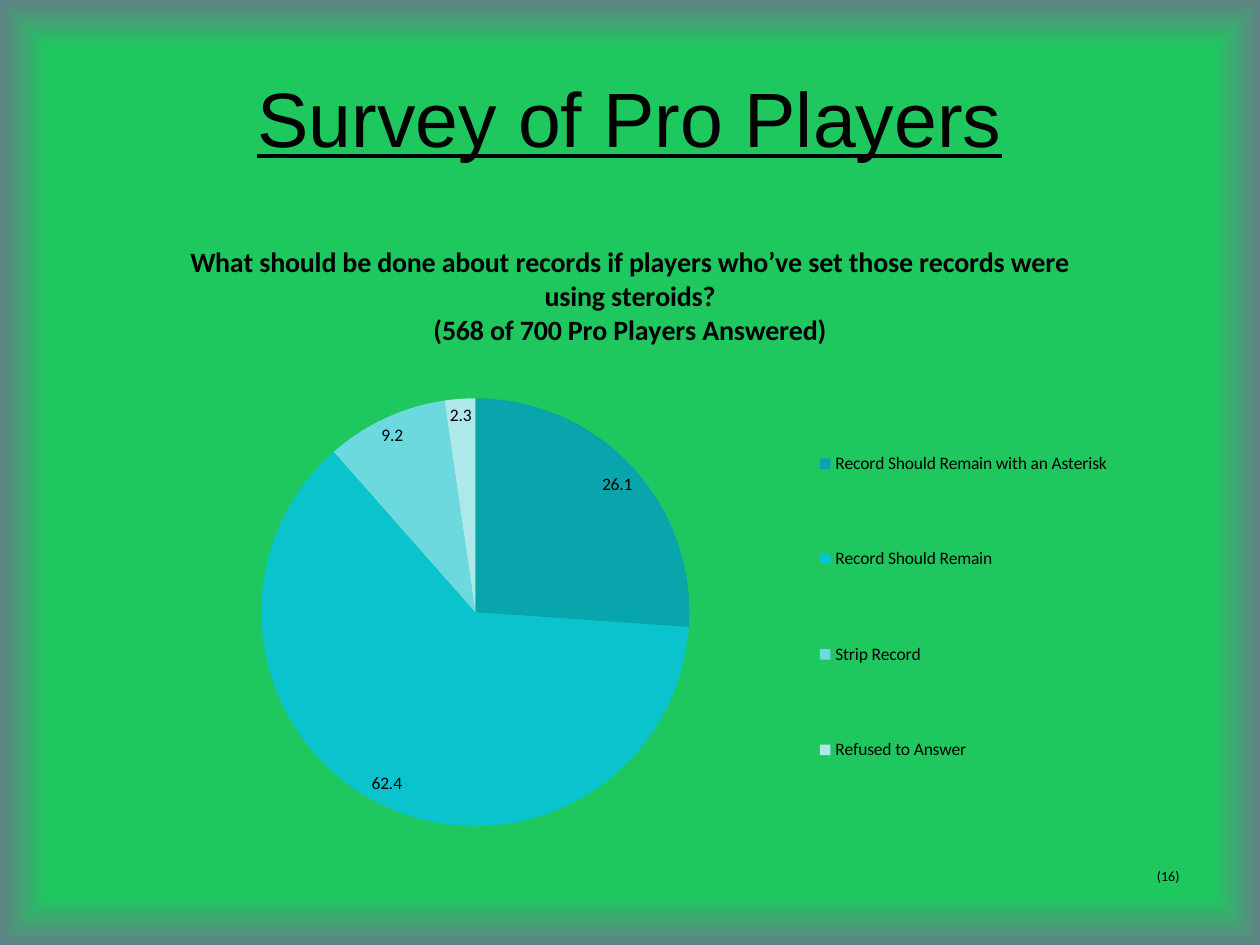
from dataclasses import dataclass

from lxml import etree
from pptx import Presentation
from pptx import util as u
from pptx.chart import data as chart_data
from pptx.dml import color
from pptx.enum import chart as chart_enum
from pptx.enum import text
from pptx.oxml import ns


@dataclass(frozen=True)
class Theme:
    """Colours, fonts and type sizes of the slide."""
    ink: str = "000000"
    field: str = "1FC75F"
    edge: str = "618287"
    slices: tuple = ("08A5AD", "0AC3CD", "6CD9DF", "AEE8EB")
    heading_font: str = "Arial"
    body_font: str = "Calibri"
    heading_size: int = 44
    question_size: int = 16
    chart_size: int = 10
    note_size: int = 8


THEME = Theme()
QUESTION = (
    "What should be done about records if players who’ve set those records were using steroids?",
    "(568 of 700 Pro Players Answered)",
)
ANSWERS = {
    "Record Should Remain with an Asterisk": 26.1,
    "Record Should Remain": 62.4,
    "Strip Record": 9.2,
    "Refused to Answer": 2.3,
}


def style_font(font, name, size):
    """Give a font its face, size and the ink colour."""
    font.name = name
    font.size = u.Pt(size)
    font.color.rgb = color.RGBColor.from_string(THEME.ink)


def paint_background(slide):
    """Fill the slide with a flat field that fades to the edge colour."""
    slide.background.fill.gradient()
    gradient = slide.element.xpath(".//p:bg//a:gradFill")[0]
    for child in list(gradient):
        gradient.remove(child)
    stops = etree.SubElement(gradient, ns.qn("a:gsLst"))
    for position, value in ((90, THEME.field), (100, THEME.edge), (100, THEME.edge)):
        stop = etree.SubElement(stops, ns.qn("a:gs"), pos=str(position * 1000))
        etree.SubElement(stop, ns.qn("a:srgbClr"), val=value)
    shade = etree.SubElement(gradient, ns.qn("a:path"), attrib={"path": "shape"})
    sides = {side: "50000" for side in "ltrb"}
    etree.SubElement(shade, ns.qn("a:fillToRect"), attrib=sides)


def add_text(slide, box, wording, font_name, size, centred=False):
    """Place one line of text in the box and return its font."""
    shape = slide.shapes.add_textbox(*map(u.Pt, box))
    frame = shape.text_frame
    frame.word_wrap = True
    frame.text = wording
    paragraph = frame.paragraphs[0]
    if centred:
        frame.vertical_anchor = text.MSO_ANCHOR.MIDDLE
        paragraph.alignment = text.PP_ALIGN.CENTER
    font = paragraph.runs[0].font
    style_font(font, font_name, size)
    return font


def set_layout(parent, index, part_box, chart_box, inner=False):
    """Fix a chart part at a box in points, measured from the chart's corner."""
    for old in parent.findall(ns.qn("c:layout")):
        parent.remove(old)
    layout = etree.Element(ns.qn("c:layout"))
    manual = etree.SubElement(layout, ns.qn("c:manualLayout"))
    settings = [("layoutTarget", "inner")] if inner else []
    settings += [("xMode", "edge"), ("yMode", "edge")]
    fractions = [part / whole for part, whole in zip(part_box, chart_box[2:] * 2)]
    settings += zip("xywh", map(str, fractions))
    for tag, value in settings:
        etree.SubElement(manual, ns.qn(f"c:{tag}"), val=value)
    parent.insert(index, layout)


def add_question(chart):
    """Write the survey question as the chart title."""
    chart.has_title = True
    frame = chart.chart_title.text_frame
    frame.text = "\n".join(QUESTION)
    chart.chart_title.include_in_layout = False
    for paragraph in frame.paragraphs:
        font = paragraph.runs[0].font
        style_font(font, THEME.body_font, THEME.question_size)
        font.bold = True


def add_survey_chart(slide, box):
    """Place the pie of answers with its question and legend in the box."""
    answers = chart_data.CategoryChartData()
    answers.categories = list(ANSWERS)
    answers.add_series("Series 1", list(ANSWERS.values()))
    frame = slide.shapes.add_chart(
        chart_enum.XL_CHART_TYPE.PIE, *map(u.Pt, box), answers)
    chart = frame.chart
    style_font(chart.font, THEME.body_font, THEME.chart_size)
    add_question(chart)

    chart.has_legend = True
    chart.legend.position = chart_enum.XL_LEGEND_POSITION.RIGHT
    chart.legend.include_in_layout = False
    style_font(chart.legend.font, THEME.body_font, THEME.chart_size)
    legend = chart.element.xpath(".//c:legend")[0]
    plot_area = chart.element.xpath(".//c:plotArea")[0]
    set_layout(legend, 1, (411, 90, 207, 261.4), box)
    set_layout(plot_area, 0, (113.4, 101.7, 244.6, 244.6), box, inner=True)

    plot = chart.plots[0]
    plot.vary_by_categories = True
    for index, value in enumerate(THEME.slices):
        fill = plot.series[0].points[index].format.fill
        fill.solid()
        fill.fore_color.rgb = color.RGBColor.from_string(value)
    plot.has_data_labels = True
    labels = plot.data_labels
    labels.show_value = True
    labels.show_percentage = False
    labels.position = chart_enum.XL_LABEL_POSITION.BEST_FIT
    style_font(labels.font, THEME.body_font, THEME.chart_size)


def build_slide(presentation):
    """Add the survey slide, measured from the size of the page."""
    slide = presentation.slides.add_slide(presentation.slide_layouts[6])
    paint_background(slide)
    margin = 36
    width = presentation.slide_width.pt - 2 * margin
    heading = add_text(slide, (margin, 21.6, width, 90), "Survey of Pro Players",
                       THEME.heading_font, THEME.heading_size, centred=True)
    heading.underline = True
    add_survey_chart(slide, (margin, 126, width, 356.4))
    add_text(slide, (654, 492.3, 36, 17), "(16)", THEME.body_font, THEME.note_size)


def main():
    """Build and save the presentation."""
    presentation = Presentation()
    presentation.slide_width = u.Pt(720)
    presentation.slide_height = u.Pt(540)
    build_slide(presentation)
    presentation.save("out.pptx")


if __name__ == "__main__":
    main()
